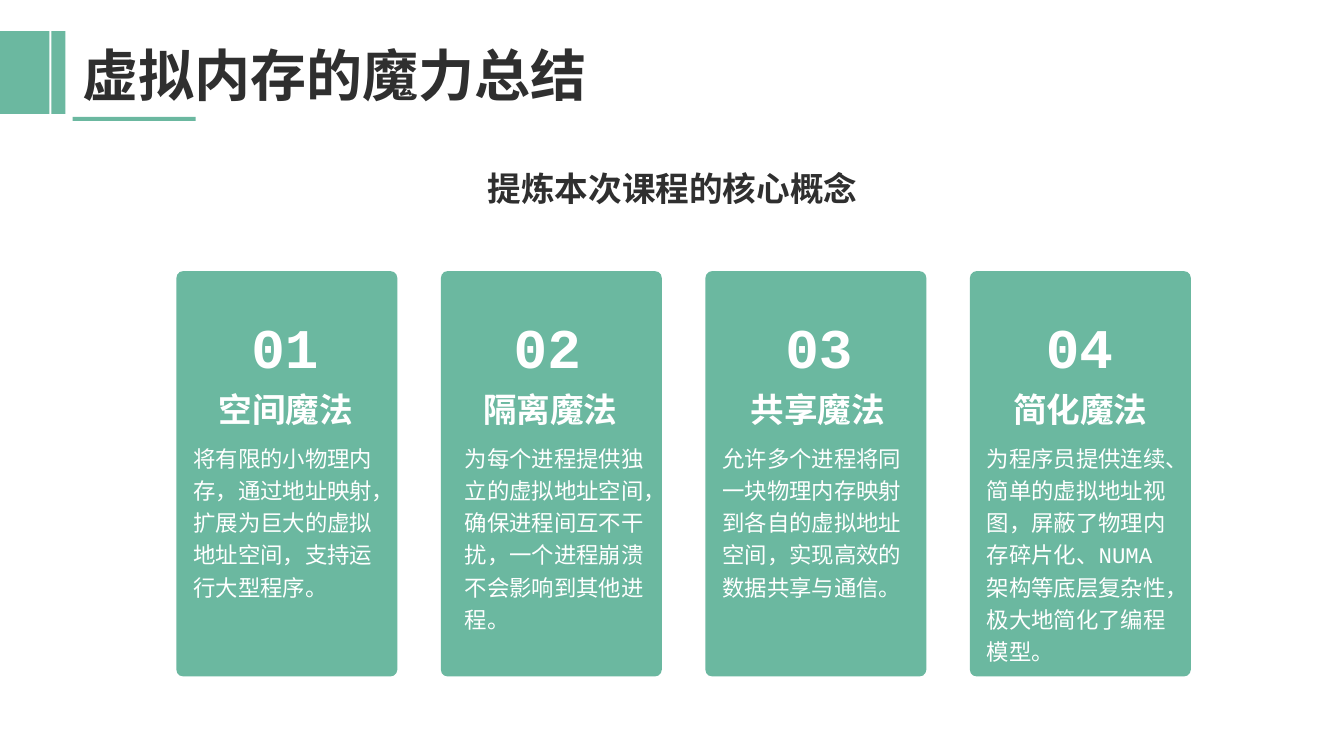
from dataclasses import dataclass

from pptx import Presentation
from pptx.dml.color import RGBColor
from pptx.enum.shapes import MSO_SHAPE
from pptx.enum.text import MSO_ANCHOR, MSO_AUTO_SIZE, PP_ALIGN
from pptx.util import Emu, Pt

EMU_PER_PX = 9144  # 100 px to the inch


@dataclass(frozen=True)
class Theme:
    green: RGBColor = RGBColor(0x6B, 0xB8, 0xA0)
    ink: RGBColor = RGBColor(0x2F, 0x2F, 0x2F)
    white: RGBColor = RGBColor(0xFF, 0xFF, 0xFF)
    font: str = "Courier New"
    display: int = 40
    heading: int = 24
    body: int = 16


@dataclass(frozen=True)
class Card:
    number: str
    heading: str
    body: str
    number_inset: int
    heading_inset: int
    body_inset: int


THEME = Theme()
CARDS = [
    Card("01", "空间魔法",
         "将有限的小物理内存，通过地址映射，扩展为巨大的虚拟地址空间，支持运行大型程序。",
         5, 6, 7),
    Card("02", "隔离魔法",
         "为每个进程提供独立的虚拟地址空间，确保进程间互不干扰，一个进程崩溃不会影响到其他进程。",
         3, 6, 14),
    Card("03", "共享魔法",
         "允许多个进程将同一块物理内存映射到各自的虚拟地址空间，实现高效的数据共享与通信。",
         10, 9, 7),
    Card("04", "简化魔法",
         "为程序员提供连续、简单的虚拟地址视图，屏蔽了物理内存碎片化、NUMA架构等底层复杂性，极大地简化了编程模型。",
         6, 7, 7),
]


def px(length):
    return Emu(round(length * EMU_PER_PX))


def emu_box(box):
    return [px(length) for length in box]


def add_block(slide, box, preset=MSO_SHAPE.RECTANGLE):
    block = slide.shapes.add_shape(preset, *emu_box(box))
    block.shadow.inherit = False
    block.fill.solid()
    block.fill.fore_color.rgb = THEME.green
    block.line.fill.background()
    return block


def write(frame, words, size, color, bold=True, align=PP_ALIGN.CENTER,
          anchor=MSO_ANCHOR.BOTTOM, wrap=True, spacing=None):
    frame.auto_size = MSO_AUTO_SIZE.NONE
    frame.word_wrap = wrap
    frame.vertical_anchor = anchor
    paragraph = frame.paragraphs[0]
    paragraph.text = words
    paragraph.alignment = align
    paragraph.line_spacing = spacing
    paragraph.font.name = THEME.font
    paragraph.font.size = Pt(size)
    paragraph.font.bold = bold
    paragraph.font.color.rgb = color


def add_label(slide, box, words, size, color, **style):
    label = slide.shapes.add_textbox(*emu_box(box))
    write(label.text_frame, words, size, color, **style)


def add_header(slide, box, words):
    """Green tabs at the slide edge, an underline and the slide title."""
    left, top, width, height = box
    add_block(slide, (left + 72, top + 102, 122, 4))
    add_block(slide, (left, top + 17, 49, 82))
    add_block(slide, (left + 51, top + 17, 14, 82))
    title = slide.shapes.title
    title.left, title.top, title.width, title.height = emu_box(
        (left + 72, top, width - 72, height))
    write(title.text_frame, words, THEME.display, THEME.ink, align=PP_ALIGN.LEFT)


def add_card(slide, box, card):
    left, top, width, height = box
    text_width = width - 14
    panel = add_block(slide, box, MSO_SHAPE.ROUNDED_RECTANGLE)
    panel.adjustments[0] = 0.03
    add_label(slide, (left + card.body_inset, top + 162, text_width, 182),
              card.body, THEME.body, THEME.white, bold=False,
              align=PP_ALIGN.LEFT, anchor=MSO_ANCHOR.TOP, spacing=1.2)
    add_label(slide, (left + card.heading_inset, top + 90, text_width, 72),
              card.heading, THEME.heading, THEME.white)
    add_label(slide, (left + card.number_inset, top + 15, text_width, 98),
              card.number, THEME.display, THEME.white, wrap=False)


def add_card_row(slide, box, cards, card_width):
    left, top, width, height = box
    pitch = (width - card_width) / (len(cards) - 1)
    for index, card in enumerate(cards):
        add_card(slide, (left + index * pitch, top, card_width, height), card)


def main():
    deck = Presentation()
    deck.slide_width, deck.slide_height = px(1333), px(750)
    title_only = deck.slide_layouts[5]
    slide = deck.slides.add_slide(title_only)
    add_header(slide, (0, 14, 1260, 98), "虚拟内存的魔力总结")
    add_label(slide, (74, 124, 1186, 126), "提炼本次课程的核心概念",
              THEME.heading, THEME.ink, anchor=MSO_ANCHOR.MIDDLE)
    add_card_row(slide, (175, 269, 1006, 402), CARDS, card_width=219)
    deck.save("out.pptx")


if __name__ == "__main__":
    main()
